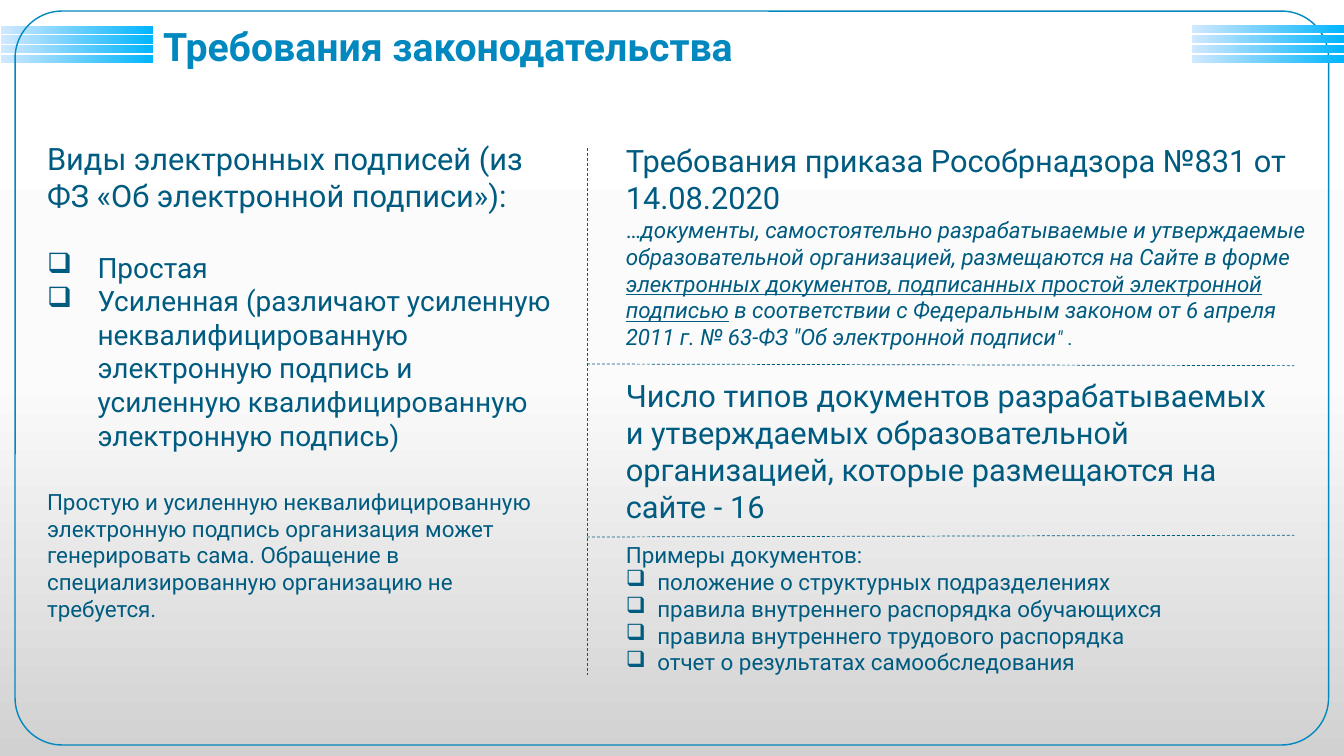
import copy

import pptx
import pptx.util
from pptx.dml.color import RGBColor
from pptx.enum.dml import MSO_LINE
from pptx.enum.shapes import MSO_CONNECTOR, MSO_SHAPE
from pptx.enum.text import MSO_ANCHOR, MSO_AUTO_SIZE
from pptx.oxml.ns import qn

Pt = pptx.util.Pt

BLUE = RGBColor(0x00, 0x88, 0xBF)
DARK_BLUE = RGBColor(0x00, 0x5B, 0x80)
BAR_COLORS = [RGBColor(0xD1, 0xE8, 0xFF), RGBColor(0x00, 0xB5, 0xFF)]
BACKGROUND_COLORS = [RGBColor(0xFF, 0xFF, 0xFF), RGBColor(0xFB, 0xFB, 0xFB),
                     RGBColor(0xD1, 0xD1, 0xD1)]
FONT = "Roboto"

# A paragraph is (runs, format); a run is (text, format).
TITLE = [([("Требования законодательства", {})], {})]

SIGNATURE_TYPES = [
    ([("Виды электронных подписей (из ФЗ «Об электронной подписи»):", {})],
     {"size": 22}),
    ([("Простая", {})], {"size": 20, "indent": 36, "before": 25.8}),
    ([("Усиленная (различают усиленную неквалифицированную электронную "
       "подпись и усиленную квалифицированную электронную подпись)", {})],
     {"size": 20, "indent": 36}),
    ([("Простую и усиленную неквалифицированную электронную подпись "
       "организация может генерировать сама. Обращение в "
       "специализированную организацию не требуется.", {})],
     {"size": 16, "before": 25.8}),
]

ORDER_REQUIREMENTS = [
    ([("Требования приказа Рособрнадзора №831 от 14.08.2020", {})],
     {"size": 22}),
    ([("…", {}),
      ("документы, самостоятельно разрабатываемые и утверждаемые "
       "образовательной организацией, размещаются на Сайте в форме ",
       {"italic": True}),
      ("электронных документов, подписанных простой электронной подписью",
       {"italic": True, "underline": True}),
      (" в соответствии с Федеральным законом от 6 апреля 2011 г. "
       "№ 63-ФЗ \"Об электронной подписи", {"italic": True}),
      ("\" ", {"italic": True, "size": 14}),
      (".", {"size": 14})],
     {"size": 16}),
]

DOCUMENT_COUNT = [
    ([("Число типов документов разрабатываемых и утверждаемых "
       "образовательной организацией, которые размещаются на сайте - 16",
       {})], {"size": 22}),
]

EXAMPLES = [
    "положение о структурных подразделениях",
    "правила внутреннего распорядка обучающихся",
    "правила внутреннего трудового распорядка",
    "отчет о результатах самообследования",
]
DOCUMENT_EXAMPLES = [([("Примеры документов:", {})], {"size": 16})] + [
    ([(example, {})], {"size": 16, "indent": 22.5}) for example in EXAMPLES]

RIGHT_COLUMN = 440
DIVIDER_X, DIVIDER_END = 419.3, 924.5
DIVIDERS = [
    (DIVIDER_X, 106, DIVIDER_X, 482.5),
    (DIVIDER_X, 260, DIVIDER_END, 261.2),
    (DIVIDER_X, 383.6, DIVIDER_END, 382.3),
]
BAR_GROUPS = [(0.7, 18.3), (851.5, 18)]
BAR_COUNT, BAR_WIDTH, BAR_HEIGHT, BAR_STEP = 4, 108.7, 5.9, 7


def fill_gradient(fill, colors, angle):
    """Spread the colours evenly; extra stops must already exist."""
    for stop, color in zip(fill.gradient_stops, colors):
        stop.color.rgb = color
    for index, stop in enumerate(fill.gradient_stops):
        stop.position = index / (len(colors) - 1)
    fill.gradient_angle = angle


def paint_background(slide):
    fill = slide.background.fill
    fill.gradient()
    stops = slide.element.find(".//" + qn("a:gsLst"))
    stops.append(copy.deepcopy(stops[-1]))
    fill_gradient(fill, BACKGROUND_COLORS, 270)


def add_bars(slide, left, top):
    group = slide.shapes.add_group_shape()
    for index in range(BAR_COUNT):
        bar = group.shapes.add_shape(
            MSO_SHAPE.RECTANGLE, Pt(left), Pt(top + index * BAR_STEP),
            Pt(BAR_WIDTH), Pt(BAR_HEIGHT))
        bar.shadow.inherit = False
        bar.line.fill.background()
        bar.fill.gradient()
        fill_gradient(bar.fill, BAR_COLORS, 0)


def add_frame(slide):
    frame = slide.shapes.add_shape(
        MSO_SHAPE.ROUNDED_RECTANGLE, Pt(10.8), Pt(7.9), Pt(938.2), Pt(524.2))
    frame.adjustments[0] = 0.064
    frame.shadow.inherit = False
    frame.fill.background()
    frame.line.color.rgb = BLUE
    frame.line.width = Pt(1)


def add_bullet(paragraph, indent):
    properties = paragraph._p.get_or_add_pPr()
    properties.set("marL", str(int(Pt(indent))))
    properties.set("indent", str(-int(Pt(indent))))
    bullet = properties.makeelement(qn("a:buChar"), {"char": "❑"})
    properties.append(bullet)


def add_text(slide, box, paragraphs, *, size=16, color=DARK_BLUE, bold=False,
             anchor=MSO_ANCHOR.TOP, line_spacing=None,
             auto_size=MSO_AUTO_SIZE.SHAPE_TO_FIT_TEXT):
    frame = slide.shapes.add_textbox(*map(Pt, box)).text_frame
    frame.word_wrap = True
    frame.auto_size = auto_size
    frame.vertical_anchor = anchor
    for index, (runs, style) in enumerate(paragraphs):
        paragraph = frame.add_paragraph() if index else frame.paragraphs[0]
        if "indent" in style:
            add_bullet(paragraph, style["indent"])
        if "before" in style:
            paragraph.space_before = Pt(style["before"])
        if line_spacing:
            paragraph.line_spacing = line_spacing
        for text, run_style in runs:
            run = paragraph.add_run()
            run.text = text
            font = run.font
            font.name = FONT
            font.size = Pt(run_style.get("size", style.get("size", size)))
            font.color.rgb = color
            font.bold = bold
            font.italic = run_style.get("italic", False)
            font.underline = run_style.get("underline", False)


def add_divider(slide, ends):
    divider = slide.shapes.add_connector(
        MSO_CONNECTOR.STRAIGHT, *map(Pt, ends))
    divider.line.color.rgb = DARK_BLUE
    divider.line.width = Pt(0.5)
    divider.line.dash_style = MSO_LINE.DASH
    properties = divider._element.spPr
    properties.append(properties.makeelement(qn("a:effectLst"), {}))


def main():
    deck = pptx.Presentation()
    deck.slide_width, deck.slide_height = Pt(960), Pt(540)
    slide = deck.slides.add_slide(deck.slide_layouts[6])

    paint_background(slide)
    add_bars(slide, *BAR_GROUPS[0])
    add_frame(slide)
    add_bars(slide, *BAR_GROUPS[1])

    add_text(slide, (109.4, 18, 463, 33.8), TITLE, size=28, color=BLUE,
             bold=True, anchor=MSO_ANCHOR.MIDDLE, line_spacing=0.9,
             auto_size=MSO_AUTO_SIZE.NONE)
    add_text(slide, (RIGHT_COLUMN, 265.7, 488, 113.8), DOCUMENT_COUNT)
    add_text(slide, (26.6, 96.5, 381.6, 356.4), SIGNATURE_TYPES)
    add_text(slide, (RIGHT_COLUMN, 383, 488, 104.4), DOCUMENT_EXAMPLES)
    add_text(slide, (RIGHT_COLUMN, 97.9, 512, 157.7), ORDER_REQUIREMENTS)

    for ends in DIVIDERS:
        add_divider(slide, ends)
    deck.save("out.pptx")


if __name__ == "__main__":
    main()
